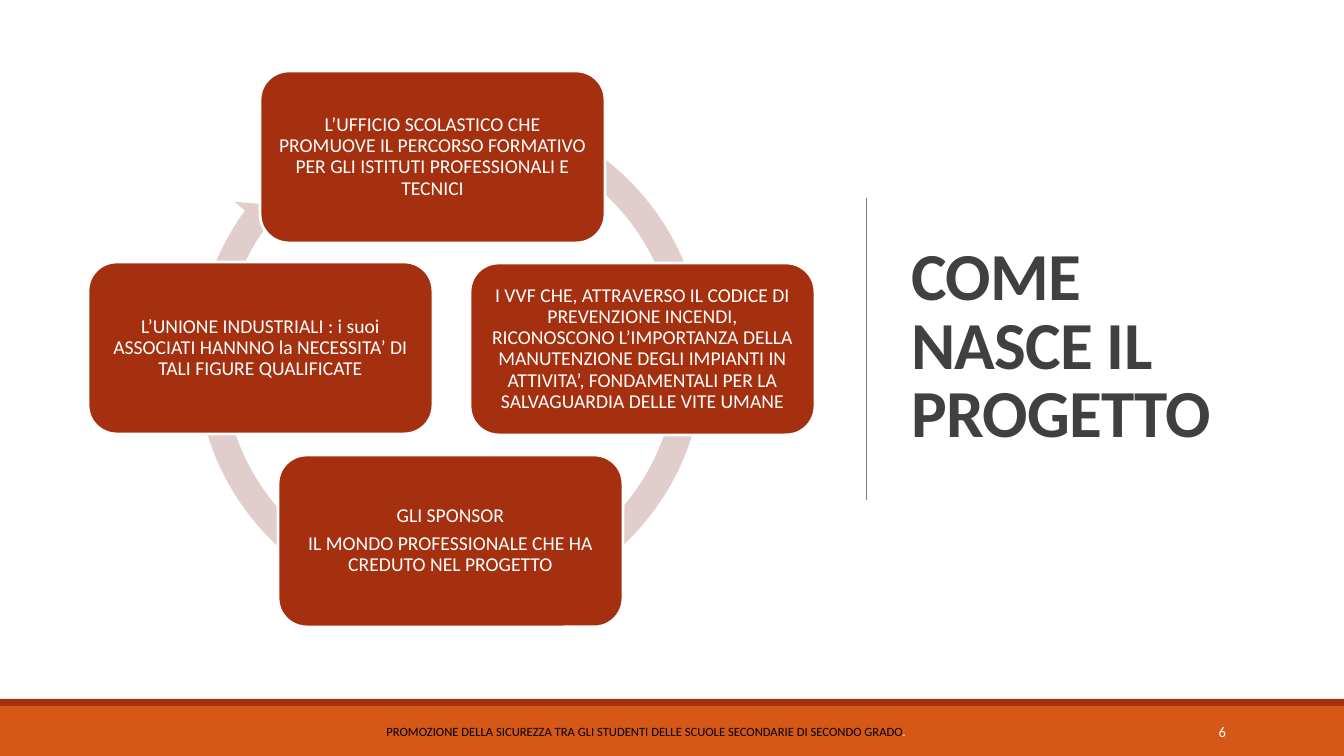
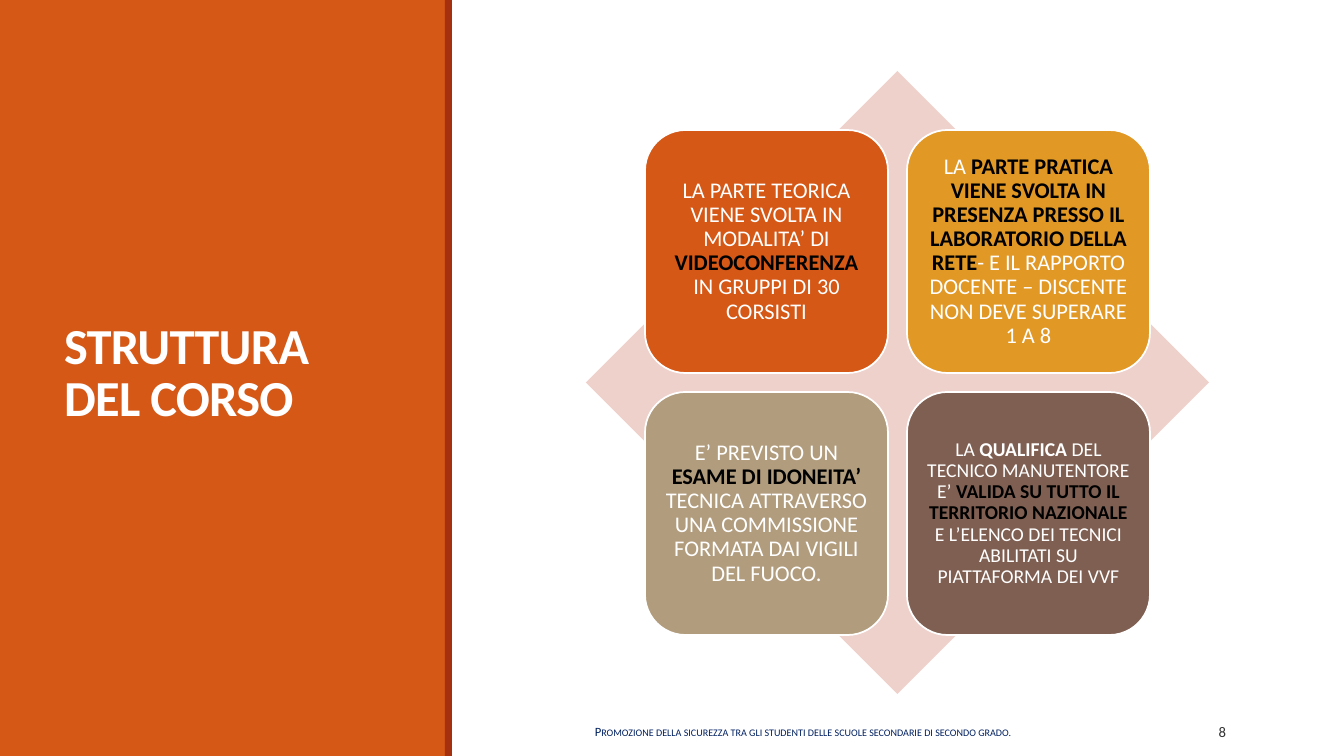
"""Build two slides on the origin and the structure of the safety course."""
from lxml import etree
from pptx import Presentation
from pptx.dml.color import RGBColor
from pptx.enum.shapes import MSO_CONNECTOR as Connector, MSO_SHAPE as Shape
from pptx.enum.text import MSO_ANCHOR as Anchor, MSO_AUTO_SIZE as AutoSize, PP_ALIGN as Align
from pptx.oxml.ns import qn
from pptx.util import Emu, Pt

PX = 914400 / 100.8
WIDTH, HEIGHT = 1344, 756
FONT = "Calibri"
COLORS = {
    "white": "FFFFFF", "black": "000000", "rust": "A5300F", "orange": "D55816",
    "amber": "E19825", "sand": "B19C7D", "brown": "7F5F52", "ring": "E1CDCC",
    "diamond": "EFD1CC", "heading": "404040", "number": "323232",
    "navy": "002060", "rule": "808080",
}
STRONG = {"bold": True, "color": "black"}

ORIGIN_TITLE = "COME NASCE IL PROGETTO"
ORIGIN_FOOTER = [[
    "PROMOZIONE DELLA SICUREZZA TRA GLI STUDENTI DELLE SCUOLE SECONDARIE DI SECONDO GRADO",
    (".", {"color": "white"}),
]]
PARTNER_SIZE = (345, 172)
PARTNERS = [
    ((88, 262), [["L’UNIONE INDUSTRIALI : i suoi ASSOCIATI HANNNO la NECESSITA’ DI "
                  "TALI FIGURE QUALIFICATE"]]),
    ((470, 263), [["I VVF CHE, ATTRAVERSO IL CODICE DI PREVENZIONE INCENDI, RICONOSCONO "
                   "L’IMPORTANZA DELLA MANUTENZIONE DEGLI IMPIANTI IN ATTIVITA’, "
                   "FONDAMENTALI PER LA SALVAGUARDIA DELLE VITE UMANE"]]),
    ((278, 455), [["GLI SPONSOR"], ["IL MONDO PROFESSIONALE CHE HA CREDUTO NEL PROGETTO"]]),
    ((260, 71), [["L’UFFICIO SCOLASTICO CHE PROMUOVE IL PERCORSO FORMATIVO PER GLI "
                  "ISTITUTI PROFESSIONALI E TECNICI"]]),
]
CYCLE_ADJUSTMENTS = (0.05, 2.73, 129.5, 179.5, 0.05)

COURSE_TITLE = "STRUTTURA DEL CORSO"
COURSE_FOOTER = [["Promozione della sicurezza tra gli studenti delle scuole secondarie "
                  "di secondo grado."]]
COURSE_PARTS = [
    ("orange", 16, [["LA PARTE TEORICA VIENE SVOLTA IN MODALITA’ DI ",
                     ("VIDEOCONFERENZA", STRONG), " IN GRUPPI DI 30 CORSISTI"]]),
    ("amber", 16, [["LA ", ("PARTE PRATICA VIENE SVOLTA IN PRESENZA PRESSO IL "
                            "LABORATORIO DELLA RETE", STRONG),
                    "- E IL RAPPORTO DOCENTE – DISCENTE NON DEVE SUPERARE 1 A 8"]]),
    ("sand", 16, [["E’ PREVISTO UN ", ("ESAME DI IDONEITA’", STRONG),
                   " TECNICA ATTRAVERSO UNA COMMISSIONE FORMATA DAI VIGILI DEL FUOCO."]]),
    ("brown", 14, [["LA ", ("QUALIFICA", {"bold": True}), " DEL TECNICO MANUTENTORE E’ ",
                    ("VALIDA SU TUTTO IL TERRITORIO NAZIONALE ", STRONG),
                    "E L’ELENCO DEI TECNICI ABILITATI SU PIATTAFORMA DEI VVF"]]),
]
PART_ORIGIN, PART_SIDE, PART_GAP = (645, 130), 243, 19


def px(*lengths):
    return [Emu(round(length * PX)) for length in lengths]


def rgb(name):
    return RGBColor.from_string(COLORS[name])


def write(holder, paragraphs, size, color="white", bold=False, align=Align.CENTER,
          line=0.9, after=0, inset=None, run_attributes=None):
    frame = holder.text_frame
    frame.word_wrap = True
    frame.auto_size = AutoSize.NONE
    frame.vertical_anchor = Anchor.MIDDLE
    if inset is not None:
        frame.margin_left = frame.margin_right = px(inset)[0]
        frame.margin_top = frame.margin_bottom = px(inset)[0]
    for index, parts in enumerate(paragraphs):
        paragraph = frame.add_paragraph() if index else frame.paragraphs[0]
        paragraph.alignment = align
        paragraph.line_spacing = line
        paragraph.space_before = Pt(0)
        paragraph.space_after = Pt(after)
        for part in parts:
            words, style = (part, {}) if isinstance(part, str) else part
            run = paragraph.add_run()
            run.text = words
            run.font.name = FONT
            run.font.size = Pt(size)
            run.font.bold = style.get("bold", bold)
            run.font.color.rgb = rgb(style.get("color", color))
            for key, value in (run_attributes or {}).items():
                run.font._element.set(key, value)


def draw(slide, preset, box, fill, border=None):
    figure = slide.shapes.add_shape(preset, *px(*box))
    figure.shadow.inherit = False
    figure.fill.solid()
    figure.fill.fore_color.rgb = rgb(fill)
    if border:
        figure.line.color.rgb = rgb("white")
        figure.line.width = Pt(border)
    else:
        figure.line.fill.background()
    return figure


def start_slide(deck, bands, title, title_box, title_size, title_color):
    slide = deck.slides.add_slide(deck.slide_layouts[5])
    for box, fill in bands:
        draw(slide, Shape.RECTANGLE, box, fill)
    heading = slide.shapes.title
    slide.shapes._spTree.append(heading._element)
    heading.left, heading.top, heading.width, heading.height = px(*title_box)
    write(heading, [[title]], title_size, title_color, bold=True, align=Align.LEFT,
          line=0.85, run_attributes={"spc": "-50"})
    return slide


def add_footer(slide, words, span, number, number_span, color, number_color, **style):
    for (left, width), paragraphs, options in (
        (span, words, {"size": 9, "color": color, **style}),
        (number_span, [[number]],
         {"size": 10.5, "color": number_color, "align": Align.RIGHT, "line": 1}),
    ):
        write(slide.shapes.add_textbox(*px(left, 712, width, 40)), paragraphs, **options)


def build_origin(deck):
    bands = [((0, 699, WIDTH, 7), "rust"), ((0, 706, WIDTH, 50), "orange")]
    slide = start_slide(deck, bands, ORIGIN_TITLE, (901, 70, 372, 557), 48, "heading")
    divider = slide.shapes.add_connector(Connector.STRAIGHT, *px(866, 198, 866, 500))
    divider.line.color.rgb = rgb("rule")
    divider.line.width = Pt(0.5)
    etree.SubElement(divider._element.spPr, qn("a:effectLst"))
    add_footer(slide, ORIGIN_FOOTER, (355, 582), "6", (1092, 144), "black", "white")
    cycle = draw(slide, Shape.CIRCULAR_ARROW, (183, 93, 534, 534), "ring")
    for index, value in enumerate(CYCLE_ADJUSTMENTS):
        cycle.adjustments[index] = value
    for corner, paragraphs in PARTNERS:
        card = draw(slide, Shape.ROUNDED_RECTANGLE, corner + PARTNER_SIZE, "rust", 2)
        write(card, paragraphs, 14, after=5, inset=6)


def build_course(deck):
    bands = [((0, 0, 446, HEIGHT), "orange"), ((445, 0, 7, HEIGHT), "rust")]
    slide = start_slide(deck, bands, COURSE_TITLE, (54, 57, 340, 636), 36, "white")
    add_footer(slide, COURSE_FOOTER, (522, 562), "8", (1116, 120), "navy", "number",
               line=1, run_attributes={"cap": "small"})
    draw(slide, Shape.DIAMOND, (586, 71, 623, 623), "diamond")
    for index, (fill, size, paragraphs) in enumerate(COURSE_PARTS):
        row, column = divmod(index, 2)
        left, top = (start + step * (PART_SIDE + PART_GAP)
                     for start, step in zip(PART_ORIGIN, (column, row)))
        card = draw(slide, Shape.ROUNDED_RECTANGLE, (left, top, PART_SIDE, PART_SIDE),
                    fill, 1.25)
        write(card, paragraphs, size, inset=7 if size == 16 else 6)


def main():
    deck = Presentation()
    deck.slide_width, deck.slide_height = px(WIDTH, HEIGHT)
    build_origin(deck)
    build_course(deck)
    deck.save("out.pptx")


if __name__ == "__main__":
    main()
